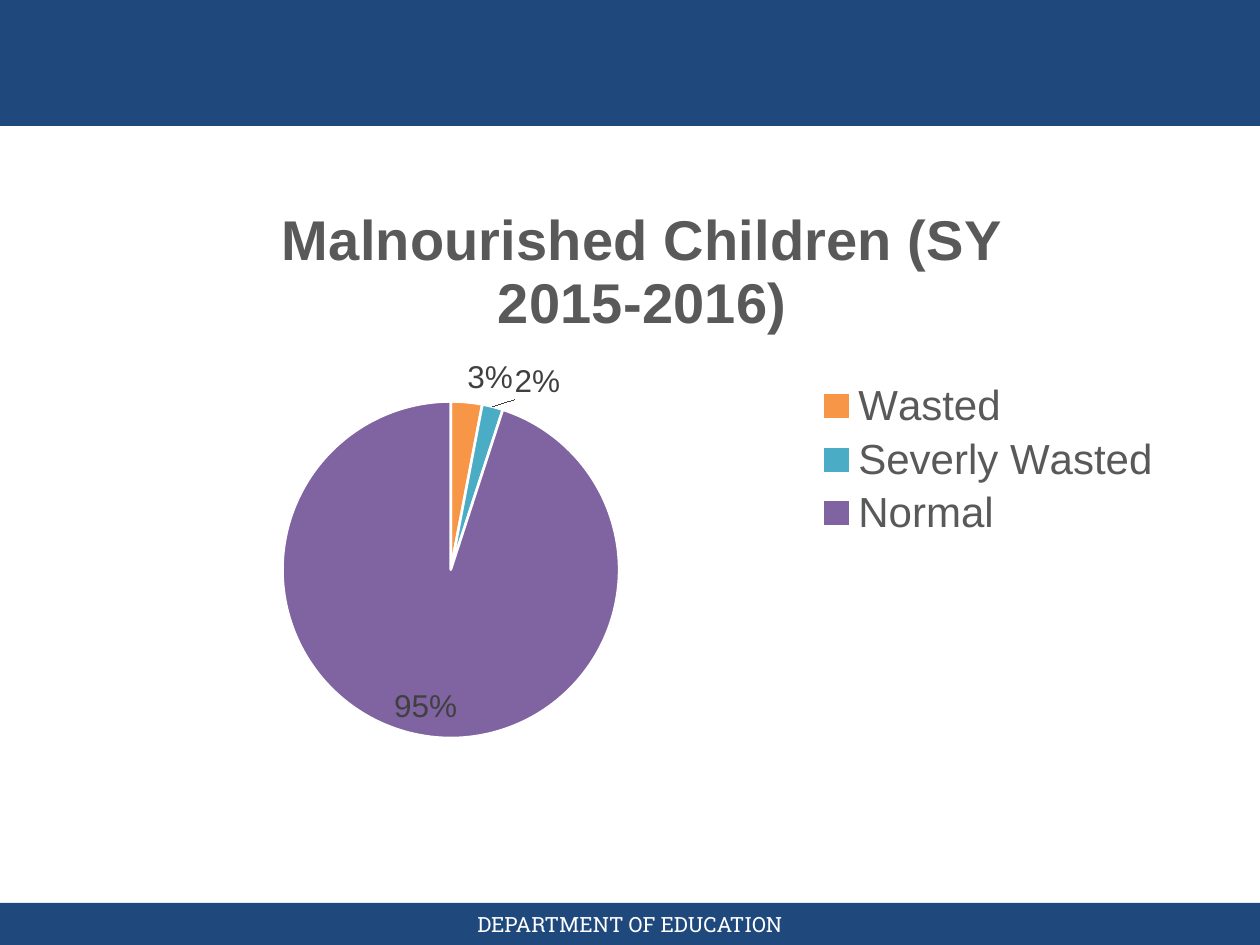
from lxml import etree
from pptx import Presentation
from pptx import util as u
from pptx.chart.data import CategoryChartData
from pptx.dml.color import RGBColor
from pptx.enum import chart as charts, shapes, text
from pptx.oxml.ns import qn

COLORS = {
    "navy": "1F497D", "white": "FFFFFF", "gray": "595959", "label": "404040",
    "Wasted": "F79646", "Severly Wasted": "4BACC6", "Normal": "8064A2",
}
CHILDREN = {"Wasted": 3, "Severly Wasted": 2, "Normal": 95}


class SlideBuilder:
    """Draw styled elements on the current slide, with lengths in points."""

    def __init__(self, slide, heading_font="Roboto Slab", chart_font="Arial"):
        self.slide = slide
        self.heading_font = heading_font
        self.chart_font = chart_font

    def color(self, name):
        return RGBColor.from_string(COLORS[name])

    def style(self, font, name, size, color, bold=False):
        font.name, font.size, font.bold = name, u.Pt(size), bold
        font.color.rgb = self.color(color)

    def band(self, top, height):
        shape = self.slide.shapes.add_shape(
            shapes.MSO_SHAPE.RECTANGLE, 0, u.Pt(top), u.Pt(720), u.Pt(height))
        shape.shadow.inherit = False
        shape.fill.solid()
        shape.fill.fore_color.rgb = self.color("navy")
        shape.line.fill.background()

    def caption(self, wording, left, top, width, height):
        box = self.slide.shapes.add_textbox(*map(u.Pt, (left, top, width, height)))
        frame = box.text_frame
        frame.word_wrap = True
        frame.vertical_anchor = text.MSO_ANCHOR.MIDDLE
        frame.text = wording
        paragraph = frame.paragraphs[0]
        paragraph.alignment = text.PP_ALIGN.CENTER
        self.style(paragraph.runs[0].font, self.heading_font, 12, "white")

    def place(self, element, **fractions):
        layout = element.find(qn("c:layout"))
        if layout is None:
            layout = etree.Element(qn("c:layout"))
            element.find(qn("c:overlay")).addprevious(layout)
        for child in list(layout):
            layout.remove(child)
        manual = etree.SubElement(layout, qn("c:manualLayout"))
        settings = {"xMode": "edge", "yMode": "edge", **fractions}
        for key, value in settings.items():
            etree.SubElement(manual, qn(f"c:{key}")).set("val", str(value))

    def pie(self, title, values, left, top, width, height):
        data = CategoryChartData()
        data.categories = list(values)
        data.add_series("Series 1", list(values.values()))
        chart = self.slide.shapes.add_chart(
            charts.XL_CHART_TYPE.PIE, *map(u.Pt, (left, top, width, height)), data).chart
        chart.font.name, chart.font.size = self.chart_font, u.Pt(10)

        chart.has_title = True
        chart.chart_title.include_in_layout = False
        chart.chart_title.text_frame.text = title
        run = chart.chart_title.text_frame.paragraphs[0].runs[0]
        self.style(run.font, self.chart_font, 32, "gray", True)

        chart.has_legend = True
        legend = chart.legend
        legend.position = charts.XL_LEGEND_POSITION.RIGHT
        legend.include_in_layout = False
        self.style(legend.font, self.chart_font, 24, "gray")
        self.place(legend._element, x=0.67, y=0.36, w=0.32, h=0.28)

        plot = chart.plots[0]
        plot.vary_by_categories = True
        plot.has_data_labels = True
        labels = plot.data_labels
        labels.show_percentage, labels.show_value = True, False
        labels.number_format, labels.number_format_is_linked = "0%", False
        labels.position = charts.XL_LABEL_POSITION.BEST_FIT
        self.style(labels.font, self.chart_font, 18, "label")
        for index, category in enumerate(values):
            point = plot.series[0].points[index].format
            point.fill.solid()
            point.fill.fore_color.rgb = self.color(category)
            point.line.color.rgb = self.color("white")
            point.line.width = u.Pt(1.5)

        area = chart._chartSpace.chart.plotArea
        if area.find(qn("c:layout")) is None:
            area.insert(0, etree.Element(qn("c:layout")))
        self.place(area, layoutTarget="inner", x=0.18, y=0.4, w=0.31, h=0.57)
        manual = area.find(qn("c:layout"))[0]
        manual.insert(0, manual.find(qn("c:layoutTarget")))
        self.place(chart.chart_title._element, x=0.17, y=0.05)


def main():
    presentation = Presentation()
    presentation.slide_width, presentation.slide_height = u.Pt(720), u.Pt(540)
    builder = SlideBuilder(presentation.slides.add_slide(presentation.slide_layouts[6]))
    builder.band(516, 24)
    builder.band(0, 72)
    builder.caption("DEPARTMENT OF EDUCATION", 246, 516, 228, 24)
    builder.pie("Malnourished Children (SY 2015-2016)", CHILDREN, 49.7, 92.9, 620.6, 339.8)
    presentation.save("out.pptx")


if __name__ == "__main__":
    main()
